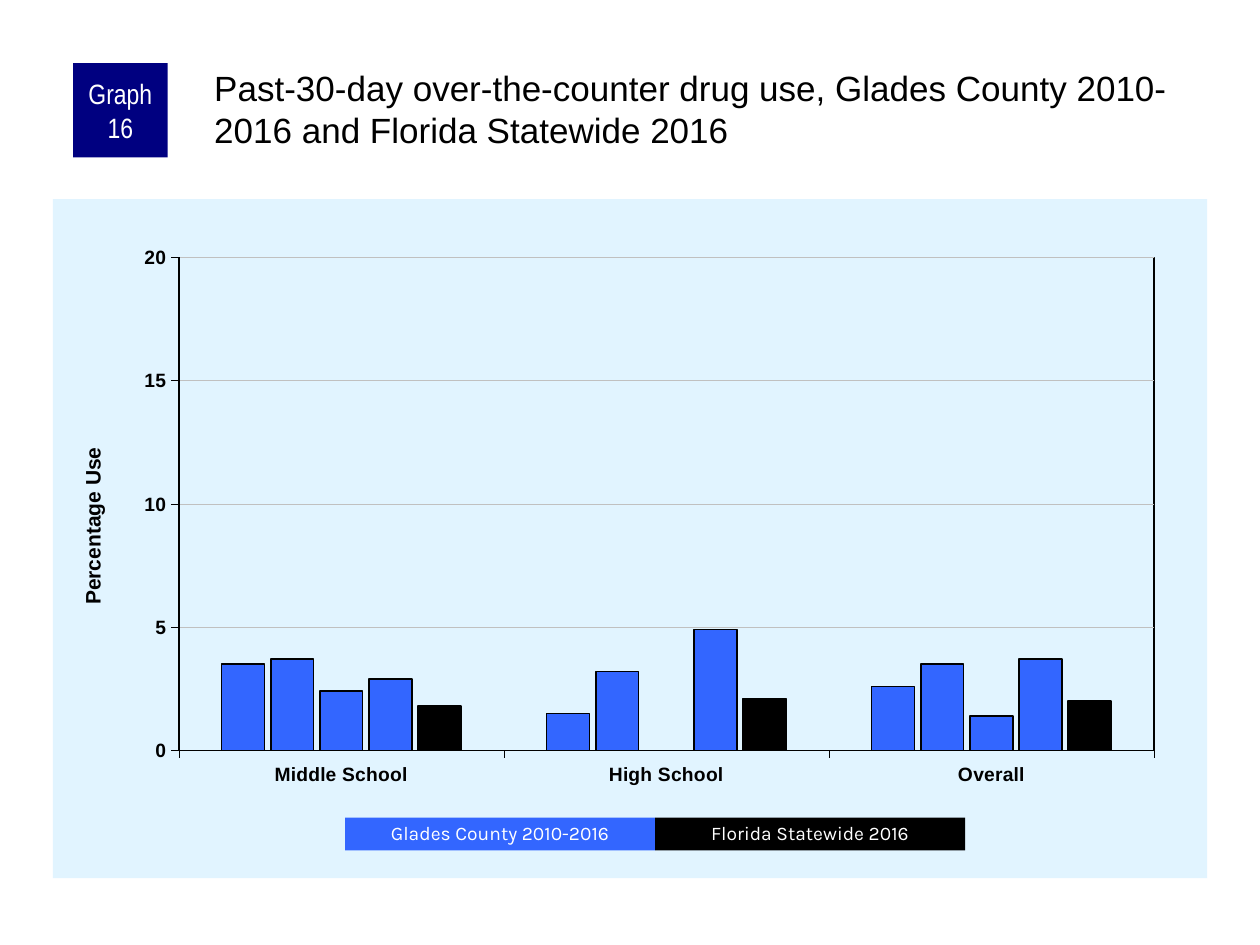
import dataclasses

import pptx
import pptx.chart.data
import pptx.dml.color
import pptx.enum.chart
import pptx.enum.shapes
import pptx.enum.text
import pptx.oxml
import pptx.oxml.ns
import pptx.util

Inches = pptx.util.Inches
Pt = pptx.util.Pt
qn = pptx.oxml.ns.qn


@dataclasses.dataclass(frozen=True)
class Theme:
    black: str = "000000"
    white: str = "FFFFFF"
    navy: str = "000080"
    blue: str = "3366FF"
    pale: str = "E1F4FF"
    grid: str = "C0C0C0"
    font: str = "Arial"
    narrow: str = "Arial Narrow"
    legend_font: str = "Karla"
    title_size: int = 20
    badge_size: int = 16
    axis_title_size: int = 12
    label_size: int = 11
    base_size: int = 8


THEME = Theme()
CATEGORIES = ["Middle School", "High School", "Overall"]
SERIES = [
    ("Series 1", (3.5, 1.5, 2.6), THEME.blue, 0.75),
    ("Series 2", (3.7, 3.2, 3.5), THEME.blue, 1),
    ("Series 3", (2.4, 0, 1.4), THEME.blue, 1),
    ("Series 4", (2.9, 4.9, 3.7), THEME.blue, 1),
    ("Series 5", (1.8, 2.1, 2), THEME.black, 1),
]
LEGEND = [
    ("Glades County 2010-2016", THEME.blue),
    ("Florida Statewide 2016", THEME.black),
]


def rgb(value):
    return pptx.dml.color.RGBColor.from_string(value)


def style_font(font, name, size, color, bold=False):
    font.name = name
    font.size = Pt(size)
    font.bold = bold
    font.color.rgb = rgb(color)


def style_line(line, color, width):
    line.color.rgb = rgb(color)
    line.width = Pt(width)


def set_margins(frame, left, top, right, bottom):
    frame.margin_left, frame.margin_right = Inches(left), Inches(right)
    frame.margin_top, frame.margin_bottom = Inches(top), Inches(bottom)


def add_label(page, text, place, fill, font, size, margins, spacing=None):
    box = page.shapes.add_shape(
        pptx.enum.shapes.MSO_SHAPE.RECTANGLE, *map(Inches, place))
    box.shadow.inherit = False
    box.fill.solid()
    box.fill.fore_color.rgb = rgb(fill)
    box.line.fill.background()
    frame = box.text_frame
    frame.word_wrap = True
    frame.vertical_anchor = pptx.enum.text.MSO_ANCHOR.MIDDLE
    set_margins(frame, *margins)
    para = frame.paragraphs[0]
    para.alignment = pptx.enum.text.PP_ALIGN.CENTER
    para.line_spacing = spacing
    span = para.add_run()
    span.text = text
    style_font(span.font, font, size, THEME.white)


def set_title(page, text):
    box = page.shapes.title
    box.left, box.top = Inches(1.67), Inches(0.5)
    box.width, box.height = Inches(7.92), Inches(0.83)
    frame = box.text_frame
    frame.word_wrap = True
    frame.auto_size = pptx.enum.text.MSO_AUTO_SIZE.NONE
    frame.vertical_anchor = pptx.enum.text.MSO_ANCHOR.TOP
    set_margins(frame, 0.03, 0.03, 0, 0)
    para = frame.paragraphs[0]
    para.alignment = pptx.enum.text.PP_ALIGN.LEFT
    span = para.add_run()
    span.text = text
    style_font(span.font, THEME.font, THEME.title_size, THEME.black)


def chart_xml(tag, content):
    return pptx.oxml.parse_xml(
        f"<c:{tag} {pptx.oxml.ns.nsdecls('c', 'a')}>{content}</c:{tag}>")


def solid(color):
    return f'<a:solidFill><a:srgbClr val="{color}"/></a:solidFill>'


def make_layout(target="", **sizes):
    parts = '<c:xMode val="edge"/><c:yMode val="edge"/>'
    parts += "".join(f'<c:{key} val="{value}"/>' for key, value in sizes.items())
    return chart_xml("layout", f"<c:manualLayout>{target}{parts}</c:manualLayout>")


def replace_layout(parent, index, layout):
    for old in parent.findall(qn("c:layout")):
        parent.remove(old)
    parent.insert(index, layout)


def style_axis(axis):
    axis.major_tick_mark = pptx.enum.chart.XL_TICK_MARK.OUTSIDE
    axis.minor_tick_mark = pptx.enum.chart.XL_TICK_MARK.NONE
    style_font(axis.tick_labels.font, THEME.font, THEME.label_size, THEME.black, True)
    style_line(axis.format.line, THEME.black, 0.25)


def style_value_axis(axis):
    style_axis(axis)
    axis.minimum_scale, axis.maximum_scale, axis.major_unit = 0, 20, 5
    axis.has_major_gridlines = True
    style_line(axis.major_gridlines.format.line, THEME.grid, 0.25)
    axis.has_title = True
    span = axis.axis_title.text_frame.paragraphs[0].add_run()
    span.text = "Percentage Use"
    style_font(span.font, THEME.font, THEME.axis_title_size, THEME.black, True)
    title = axis.axis_title._element
    replace_layout(title, 1, make_layout(x=0.02, y=0.36))


def style_areas(chart):
    space = chart._chartSpace
    plot_area = space.chart.plotArea
    inner = '<c:layoutTarget val="inner"/>'
    replace_layout(plot_area, 0, make_layout(inner, x=0.109, y=0.086, w=0.845, h=0.726))
    plot_area.append(chart_xml(
        "spPr", f'<a:noFill/><a:ln w="{Pt(1)}">{solid(THEME.black)}</a:ln>'))
    space.chart.addnext(chart_xml(
        "spPr", f"{solid(THEME.pale)}<a:ln><a:noFill/></a:ln>"))


def add_drug_use_chart(page):
    data = pptx.chart.data.CategoryChartData()
    data.categories = CATEGORIES
    for name, values, _, _ in SERIES:
        data.add_series(name, values)
    chart = page.shapes.add_chart(
        pptx.enum.chart.XL_CHART_TYPE.COLUMN_CLUSTERED,
        Inches(0.42), Inches(1.58), Inches(9.16), Inches(5.39), data).chart
    chart.has_title = False
    chart.has_legend = False
    style_font(chart.font, THEME.font, THEME.base_size, THEME.black)
    plot = chart.plots[0]
    plot.gap_width, plot.overlap = 200, -15
    plot.vary_by_categories = False
    for series, (_, _, color, width) in zip(plot.series, SERIES):
        series.format.fill.solid()
        series.format.fill.fore_color.rgb = rgb(color)
        style_line(series.format.line, THEME.black, width)
    style_axis(chart.category_axis)
    style_value_axis(chart.value_axis)
    style_areas(chart)


def main():
    deck = pptx.Presentation()
    deck.slide_width, deck.slide_height = Inches(10), Inches(7.5)
    page = deck.slides.add_slide(deck.slide_layouts[5])
    set_title(page, "Past-30-day over-the-counter drug use, "
                    "Glades County 2010-2016 and Florida Statewide 2016")
    add_drug_use_chart(page)
    add_label(page, "Graph 16", (0.58, 0.5, 0.75, 0.75), THEME.navy,
              THEME.narrow, THEME.badge_size, (0.05, 0, 0.05, 0))
    for index, (text, color) in enumerate(LEGEND):
        add_label(page, text, (2.74 + 2.46 * index, 6.49, 2.46, 0.26), color,
                  THEME.legend_font, THEME.label_size, (0.1, 0.05, 0.1, 0.05), 0.9)
    deck.save("out.pptx")


if __name__ == "__main__":
    main()
